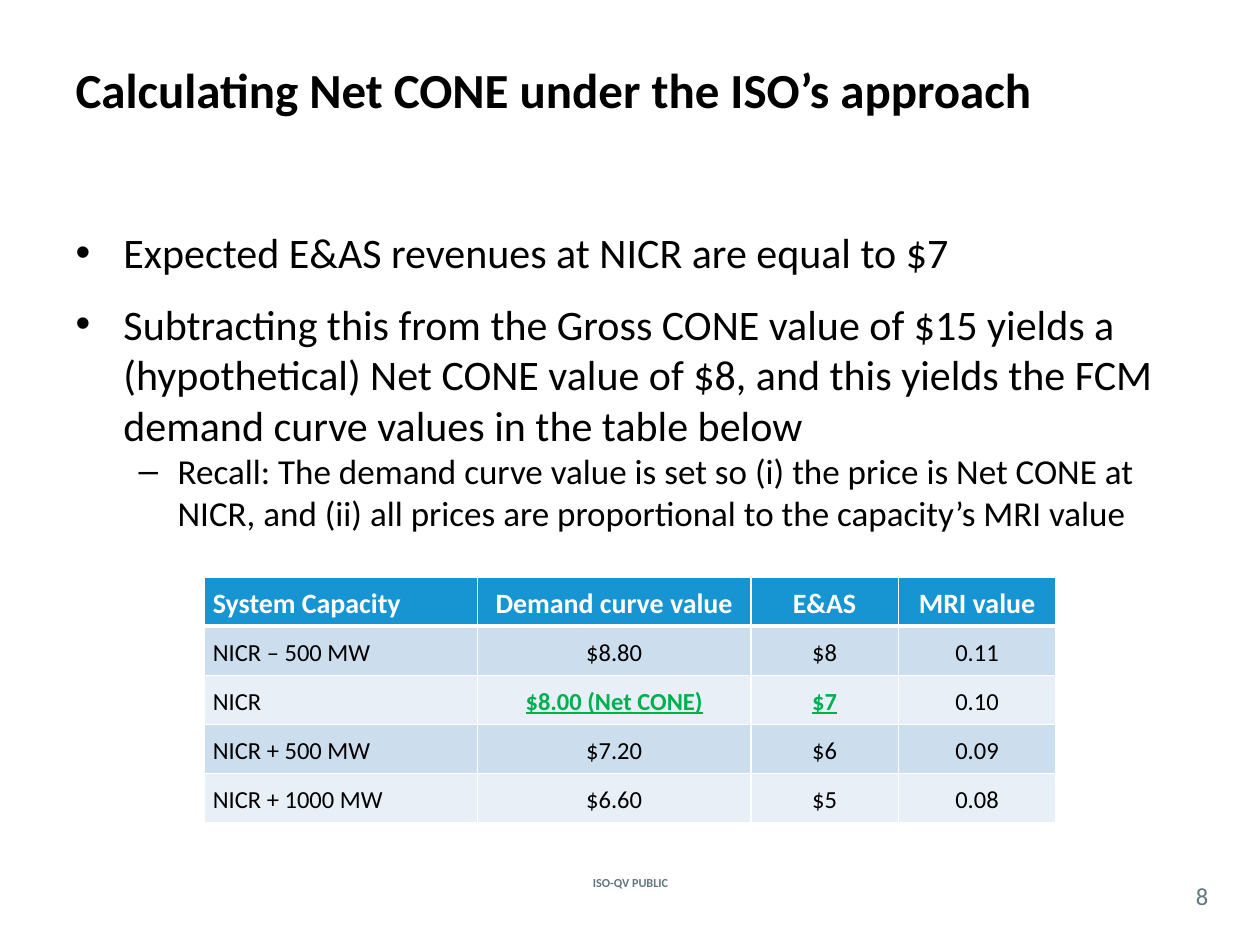
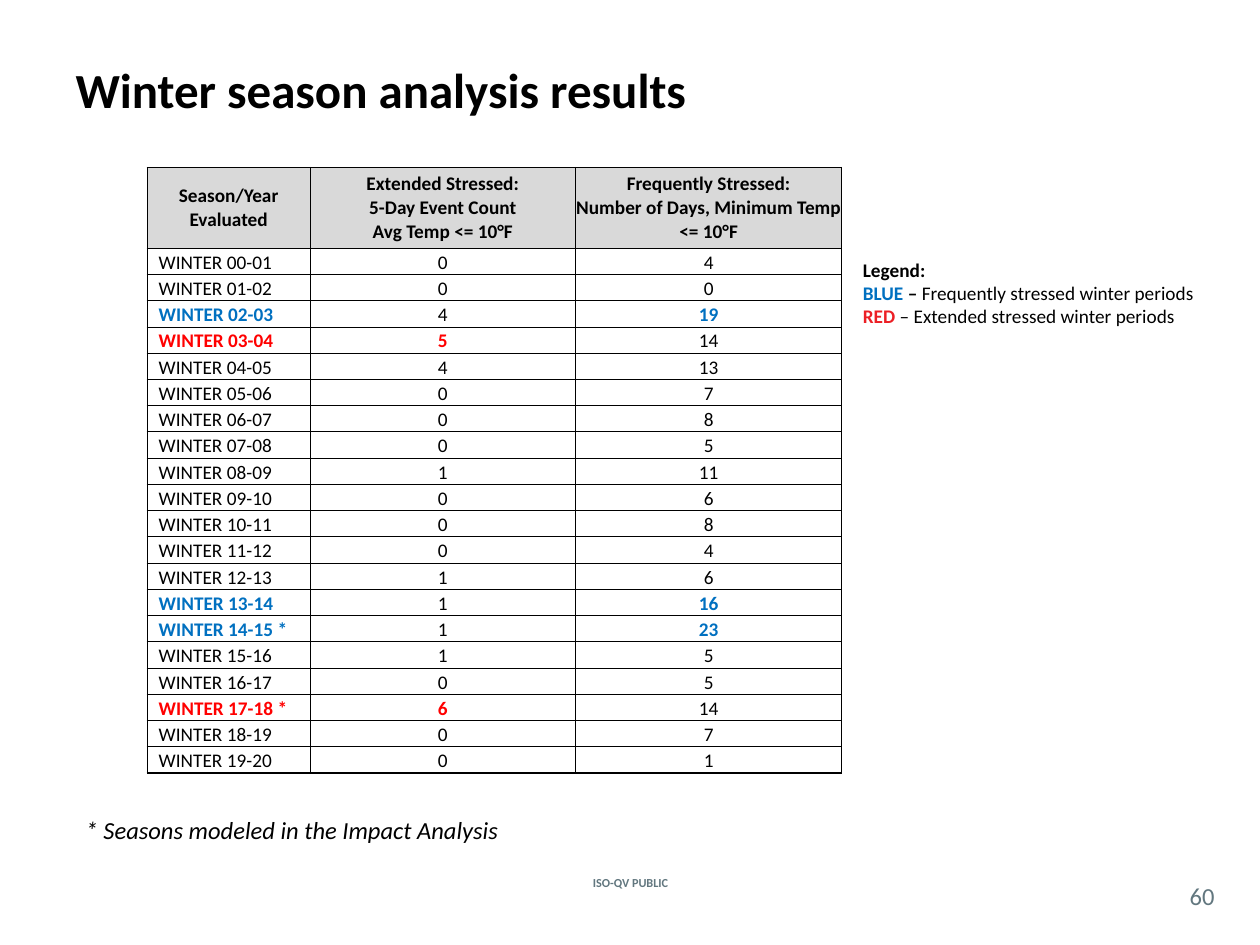
"""Build two slides on Net CONE and winter season results."""
import dataclasses
import typing

import lxml.etree
import pptx
import pptx.dml.color
import pptx.enum.text
import pptx.oxml.ns
import pptx.util

SCALE = 9144
FONT = "Calibri"
BLACK, WHITE, GRAY = "000000", "FFFFFF", "62777F"
BLUE, RED, GREEN = "0070C0", "FF0000", "00B050"
HEAD, BAND, PALE, SILVER = "1795D2", "CCDDEE", "E8EFF7", "D9D9D9"
ALIGN = pptx.enum.text.PP_ALIGN
ANCHOR = pptx.enum.text.MSO_ANCHOR
FIT = pptx.enum.text.MSO_AUTO_SIZE


class Box(typing.NamedTuple):
    x: int
    y: int
    w: int
    h: int


class Pad(typing.NamedTuple):
    left: int = 0
    right: int = 0


class Edges(typing.NamedTuple):
    L: float
    R: float
    T: float
    B: float


@dataclasses.dataclass
class Point:
    text: str
    size: int
    level: int = 0
    left: int = 0
    hang: int = 0
    gap: int = 0
    mark: str = ""
    ital: bool = False


@dataclasses.dataclass
class Cell:
    text: str
    size: int
    hue: str = BLACK
    bold: bool = False
    line: bool = False
    align: int = ALIGN.CENTER
    anchor: int = ANCHOR.MIDDLE
    fill: str = ""
    pad: Pad = Pad()
    lead: float = 1.0


@dataclasses.dataclass
class Grid:
    box: Box
    cols: list[int]
    rows: list[float]
    cells: list[list[Cell]]
    ink: str
    edges: typing.Callable[[int, int], Edges]


TITLE = Box(50, 8, 900, 125)
BODY = Box(50, 175, 900, 508)
NOTE = Box(58, 642, 900, 42)
FOOTER = Box(427, 692, 147, 17)
NUMBER = Box(933, 696, 42, 29)
LEGEND = Box(675, 200, 283, 66)

POINTS = [
    Point("Expected E&AS revenues at NICR are equal to $7", 24,
          left=38, hang=38, mark="•"),
    Point("Subtracting this from the Gross CONE value of $15 yields a "
          "(hypothetical) Net CONE value of $8, and this yields the FCM "
          "demand curve values in the table below", 24,
          left=38, hang=38, gap=12, mark="•"),
    Point("Recall: The demand curve value is set so (i) the price is Net CONE "
          "at NICR, and (ii) all prices are proportional to the capacity’s "
          "MRI value", 20, level=1, left=81, hang=31, mark="–"),
]
CURVE = [
    ("System Capacity", "Demand curve value", "E&AS", "MRI value"),
    ("NICR – 500 MW", "$8.80", "$8", "0.11"),
    ("NICR", "$8.00 (Net CONE)", "$7", "0.10"),
    ("NICR + 500 MW", "$7.20", "$6", "0.09"),
    ("NICR + 1000 MW", "$6.60", "$5", "0.08"),
]
STRESS = [
    "Season/Year Evaluated",
    "Extended Stressed:\n5-Day Event Count\nAvg Temp <= 10°F",
    "Frequently Stressed:\nNumber of Days, Minimum Temp <= 10°F",
]
EVENTS = [0, 0, 4, 5, 4, 0, 0, 0, 1, 0, 0, 0, 1, 1, 1, 1, 0, 6, 0, 0]
DAYS = [4, 0, 19, 14, 13, 7, 8, 5, 11, 6, 8, 4, 6, 16, 23, 5, 5, 14, 7, 1]
MODELED = (14, 17)
KEYS = [
    [("Legend:", BLACK, True)],
    [("BLUE ", BLUE, True), ("– ", BLACK, True),
     ("Frequently stressed winter periods", BLACK, False)],
    [("RED ", "EC1F25", True),
     ("– Extended stressed winter periods", BLACK, False)],
]


def px(size: float) -> pptx.util.Emu:
    return pptx.util.Emu(round(size * SCALE))


def color(code: str) -> pptx.dml.color.RGBColor:
    return pptx.dml.color.RGBColor.from_string(code)


def place(shape, box: Box) -> None:
    shape.left, shape.top, shape.width, shape.height = map(px, box)


def say(para, text: str, *, size: int, hue: str = BLACK, bold: bool = False,
        ital: bool = False, line: bool = False, align: int = ALIGN.LEFT,
        lead: float = 1.0, gap: int = 0) -> None:
    para.alignment = align
    para.line_spacing = lead
    para.space_before = pptx.util.Pt(gap)
    for count, part in enumerate(text.split("\n")):
        if count:
            para.add_line_break()
        run = para.add_run()
        run.text = part
        font = run.font
        font.name, font.size = FONT, pptx.util.Pt(size)
        font.bold, font.italic, font.underline = bold, ital, line
        font.color.rgb = color(hue)


def add_box(slide, box: Box, inset: bool = True):
    shape = slide.shapes.add_textbox(*map(px, box))
    frame = shape.text_frame
    frame.word_wrap = True
    if not inset:
        frame.margin_left = frame.margin_right = 0
        frame.margin_top = frame.margin_bottom = 0
    return frame


def set_mark(para, point: Point) -> None:
    props = para._p.get_or_add_pPr()
    props.set("marL", str(px(point.left)))
    props.set("indent", str(px(-point.hang)))
    tag = "a:buChar" if point.mark else "a:buNone"
    mark = lxml.etree.SubElement(props, pptx.oxml.ns.qn(tag))
    if point.mark:
        mark.set("char", point.mark)


def fill_body(slide, box: Box, points: list[Point]) -> None:
    body = slide.placeholders[1]
    place(body, box)
    frame = body.text_frame
    frame.auto_size = FIT.NONE
    for count, point in enumerate(points):
        para = frame.add_paragraph() if count else frame.paragraphs[0]
        para.level = point.level
        set_mark(para, point)
        say(para, point.text, size=point.size, ital=point.ital, gap=point.gap)


def set_edges(cell, edges: Edges, ink: str) -> None:
    props = cell._tc.get_or_add_tcPr()
    for side, width in edges._asdict().items():
        line = lxml.etree.SubElement(props, pptx.oxml.ns.qn("a:ln" + side))
        line.set("w", str(pptx.util.Pt(width)))
        solid = lxml.etree.SubElement(line, pptx.oxml.ns.qn("a:solidFill"))
        tint = lxml.etree.SubElement(solid, pptx.oxml.ns.qn("a:srgbClr"))
        tint.set("val", ink)


def draw_cell(spot, cell: Cell) -> None:
    spot.margin_left, spot.margin_right = map(px, cell.pad)
    spot.margin_top = spot.margin_bottom = 0
    spot.vertical_anchor = cell.anchor
    if cell.fill:
        spot.fill.solid()
        spot.fill.fore_color.rgb = color(cell.fill)
    else:
        spot.fill.background()
    say(spot.text_frame.paragraphs[0], cell.text, size=cell.size,
        hue=cell.hue, bold=cell.bold, line=cell.line, align=cell.align,
        lead=cell.lead)


def draw_grid(slide, grid: Grid) -> None:
    frame = slide.shapes.add_table(len(grid.rows), len(grid.cols),
                                   *map(px, grid.box))
    table = frame.table
    table.first_row = table.horz_banding = False
    for col, width in zip(table.columns, grid.cols):
        col.width = px(width)
    for row, height in zip(table.rows, grid.rows):
        row.height = px(height)
    for r, cells in enumerate(grid.cells):
        for c, cell in enumerate(cells):
            spot = table.cell(r, c)
            set_edges(spot, grid.edges(r, c), grid.ink)
            draw_cell(spot, cell)


def add_slide(deck, title: str, number: int):
    slide = deck.slides.add_slide(deck.slide_layouts[1])
    head = slide.shapes.title
    place(head, TITLE)
    head.text_frame.auto_size = FIT.NONE
    head.text_frame.vertical_anchor = ANCHOR.MIDDLE
    say(head.text_frame.paragraphs[0], title, size=28, bold=True)
    for box, text, size, bold in ((FOOTER, "ISO-QV PUBLIC", 7, True),
                                  (NUMBER, str(number), 14, False)):
        frame = add_box(slide, box, inset=box is FOOTER)
        frame.vertical_anchor = ANCHOR.MIDDLE
        say(frame.paragraphs[0], text, size=size, hue=GRAY, bold=bold,
            align=ALIGN.CENTER)
    return slide


def curve_cell(r: int, c: int, text: str) -> Cell:
    cell = Cell(text, 14, pad=Pad(7, 7), lead=1.15,
                fill=BAND if r % 2 else PALE)
    if c == 0:
        cell.align = ALIGN.LEFT
    if r == 0:
        cell.size, cell.hue, cell.bold, cell.fill = 16, WHITE, True, HEAD
    elif r == 2 and c in (1, 2):
        cell.hue, cell.bold, cell.line = GREEN, True, True
    return cell


def curve_edges(r: int, c: int) -> Edges:
    return Edges(1, 1, 3 if r == 1 else 1, 3 if r == 0 else 1)


def season_row(year: int, events: int, days: int) -> list[Cell]:
    red = RED if events >= 5 else BLACK
    blue = BLUE if days >= 15 else BLACK
    both = red if red != BLACK else blue
    star = " *" if year in MODELED else ""
    name = f"WINTER {year:02}-{year + 1:02}{star}"
    row = [Cell(text, 11, hue, hue != BLACK, anchor=ANCHOR.BOTTOM)
           for text, hue in ((name, both), (str(events), red),
                             (str(days), blue))]
    row[0].align, row[0].pad = ALIGN.LEFT, Pad(9, 0)
    return row


def season_edges(r: int, c: int) -> Edges:
    return Edges(1 if c == 0 else 0.5, 1 if c == 2 else 0.5,
                 1 if r == 0 else 0.5, 1 if r == len(DAYS) else 0.5)


def build_curve(deck) -> None:
    slide = add_slide(deck, "Calculating Net CONE under the ISO’s approach", 8)
    fill_body(slide, BODY, POINTS)
    cells = [[curve_cell(r, c, text) for c, text in enumerate(row)]
             for r, row in enumerate(CURVE)]
    draw_grid(slide, Grid(Box(162, 458, 675, 195), [217, 217, 117, 125],
                          [39] * len(CURVE), cells, WHITE, curve_edges))


def build_winter(deck) -> None:
    slide = add_slide(deck, "Winter season analysis results", 60)
    fill_body(slide, NOTE, [
        Point("* Seasons modeled in the Impact Analysis", 14, ital=True)])
    cells = [[Cell(text, 11, bold=True, fill=SILVER) for text in STRESS]]
    cells += [season_row(year, *pair)
              for year, pair in enumerate(zip(EVENTS, DAYS))]
    box, top = Box(117, 133, 551, 481), 64
    rows = [top] + [(box.h - top) / len(DAYS)] * len(DAYS)
    draw_grid(slide, Grid(box, [129, 211, 211], rows, cells, BLACK,
                          season_edges))
    frame = add_box(slide, LEGEND)
    frame.auto_size = FIT.SHAPE_TO_FIT_TEXT
    for count, key in enumerate(KEYS):
        para = frame.add_paragraph() if count else frame.paragraphs[0]
        for text, hue, bold in key:
            say(para, text, size=11, hue=hue, bold=bold)


def main() -> None:
    deck = pptx.Presentation()
    deck.slide_width, deck.slide_height = px(1000), px(750)
    build_curve(deck)
    build_winter(deck)
    deck.save("out.pptx")


if __name__ == "__main__":
    main()
